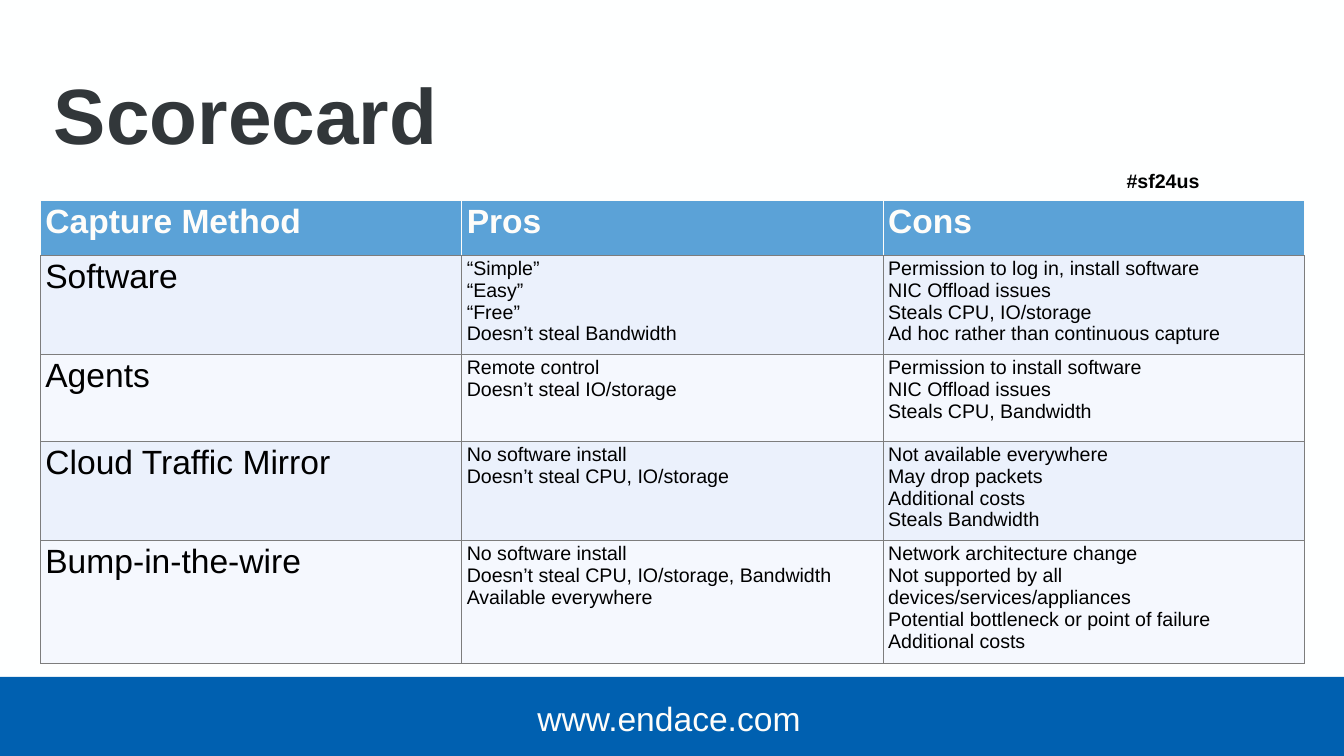
"""Build the capture method scorecard slide."""
from pptx import Presentation
from pptx.dml.color import RGBColor
from pptx.enum.shapes import MSO_SHAPE as SHAPE
from pptx.enum.text import MSO_ANCHOR as ANCHOR, PP_ALIGN as ALIGN
from pptx.oxml import parse_xml
from pptx.oxml.ns import nsdecls
from pptx.util import Pt

rgb = RGBColor.from_string
WHITE, GREY, BLACK = "FEFDFA", "7D7D7D", "000000"


def write(tf, lines, size, color, bold=False, align=ALIGN.LEFT):
    for i, line in enumerate(lines):
        p = tf.paragraphs[0] if i == 0 else tf.add_paragraph()
        p.alignment = align
        r = p.add_run()
        r.text = line
        for name, value in {"name": "Arial", "size": Pt(size), "bold": bold}.items():
            setattr(r.font, name, value)
        r.font.color.rgb = rgb(color)


def frame(sp, inset):
    tf = sp.text_frame
    fmt = {"word_wrap": True, "vertical_anchor": ANCHOR.MIDDLE}
    fmt.update({f"margin_{side}": Pt(inset) for side in ("left", "top", "right", "bottom")})
    for name, value in fmt.items():
        setattr(tf, name, value)
    return tf


prs = Presentation()
prs.slide_width, prs.slide_height = Pt(1920), Pt(1080)
s = prs.slides.add_slide(prs.slide_layouts[6])
s.background.fill.solid()
s.background.fill.fore_color.rgb = rgb("FEFFFF")

tag = s.shapes.add_textbox(Pt(1574.6), Pt(222.7), Pt(173.5), Pt(70))
write(frame(tag, 19.4), ["#sf24us"], 28, BLACK, True, ALIGN.CENTER)

footer = s.shapes.add_shape(SHAPE.RECTANGLE, Pt(-8.6), Pt(967), Pt(1928.6), Pt(116.6))
footer.shadow.inherit = False
footer.fill.solid()
footer.fill.fore_color.rgb = rgb("0060B0")
footer.line.fill.background()
write(frame(footer, 9.4), ["www.endace.com"], 48, WHITE, align=ALIGN.CENTER)

title = s.shapes.add_textbox(Pt(57.6), Pt(36), Pt(1364.4), Pt(250.6))
write(frame(title, 19.4), ["Scorecard"], 112, "32373A", True)

rows = [
    (["Capture Method"], ["Pros"], ["Cons"]),
    (["Software"],
     ["“Simple”", "“Easy”", "“Free”", "Doesn’t steal Bandwidth"],
     ["Permission to log in, install software", "NIC Offload issues",
      "Steals CPU, IO/storage", "Ad hoc rather than continuous capture"]),
    (["Agents"],
     ["Remote control", "Doesn’t steal IO/storage"],
     ["Permission to install software", "NIC Offload issues", "Steals CPU, Bandwidth"]),
    (["Cloud Traffic Mirror"],
     ["No software install", "Doesn’t steal CPU, IO/storage"],
     ["Not available everywhere", "May drop packets", "Additional costs",
      "Steals Bandwidth"]),
    (["Bump-in-the-wire"],
     ["No software install", "Doesn’t steal CPU, IO/storage, Bandwidth",
      "Available everywhere"],
     ["Network architecture change", "Not supported by all devices/services/appliances",
      "Potential bottleneck or point of failure", "Additional costs"]),
]
table = s.shapes.add_table(5, 3, Pt(57.6), Pt(286.6), Pt(1806), Pt(574)).table
table.horz_banding = False
for col in table.columns:
    col.width = Pt(602)
for i, row in enumerate(rows):
    head = i == 0
    table.rows[i].height = Pt(78 if head else 124)
    for j, lines in enumerate(row):
        cell = table.cell(i, j)
        for side in "LRTB":
            color = WHITE if head and side != "B" else GREY
            cell._tc.get_or_add_tcPr().append(parse_xml(
                f'<a:ln{side} {nsdecls("a")} w="12700"><a:solidFill>'
                f'<a:srgbClr val="{color}"/></a:solidFill></a:ln{side}>'))
        cell.fill.solid()
        cell.fill.fore_color.rgb = rgb("5BA2D7" if head else ("F5F8FE", "EBF1FC")[i % 2])
        write(cell.text_frame, lines, 48 if head or j == 0 else 28,
              WHITE if head else BLACK, head)

prs.save("out.pptx")
